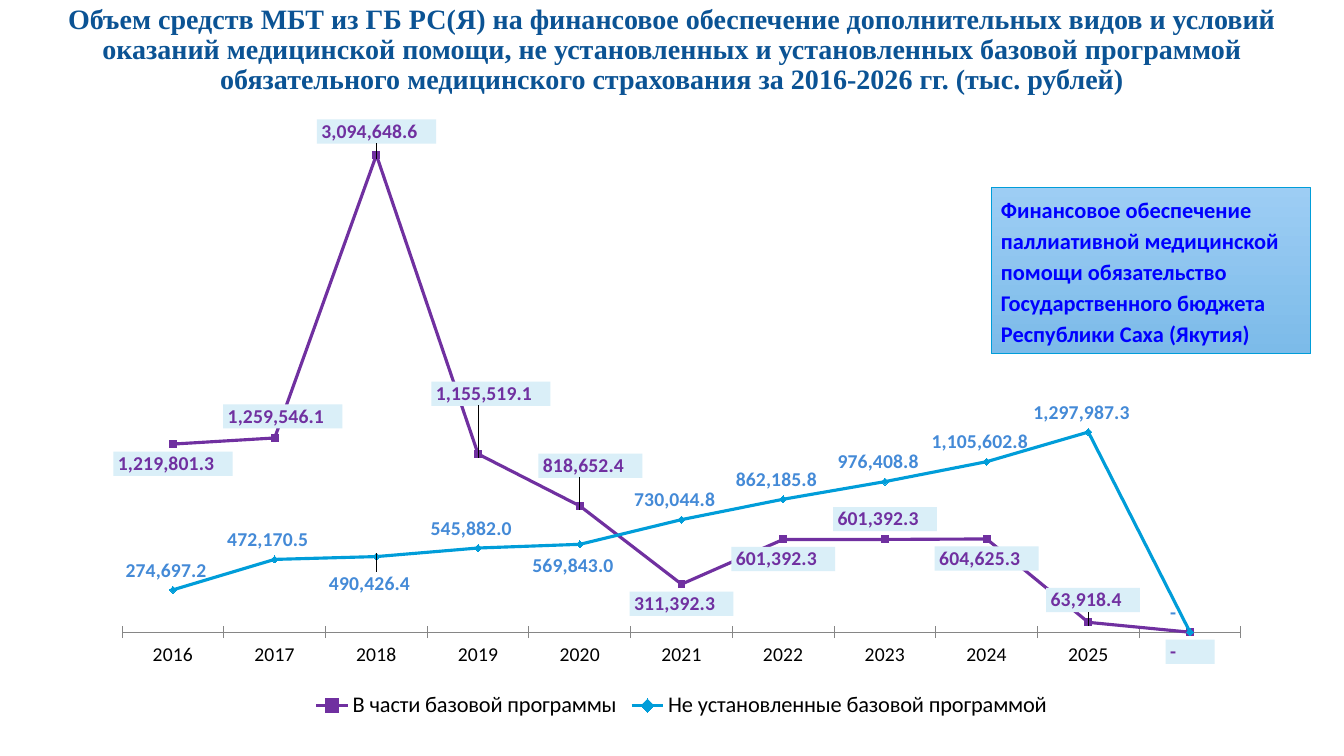
import copy

import pptx
import pptx.chart.data
import pptx.dml.color
import pptx.enum.chart
import pptx.enum.shapes
import pptx.enum.text
import pptx.oxml
import pptx.oxml.ns
import pptx.util

COLORS = {
    "title": "0B5394", "base": "7030A0", "extra": "009DD9", "extra_label": "448AD7",
    "label_fill": "DAEFF8", "axis": "868686", "text": "000000",
    "note_text": "0000FF", "note_top": "9DCDF4", "note_bottom": "7CBBE9",
}
NUMBER_FORMAT = r'_-* #,##0.0\ _₽_-;\-* #,##0.0\ _₽_-;_-* "-"??\ _₽_-;_-@_-'
YEARS = [str(year) for year in range(2016, 2027)]
below, above = pptx.enum.chart.XL_LABEL_POSITION.BELOW, pptx.enum.chart.XL_LABEL_POSITION.ABOVE
square, diamond = pptx.enum.chart.XL_MARKER_STYLE.SQUARE, pptx.enum.chart.XL_MARKER_STYLE.DIAMOND

# Label shifts are shares of the chart's width and height, keyed by point number
SERIES = [
    {"name": "В части базовой программы", "color": "base", "label_color": "base",
     "label_fill": "label_fill", "position": below, "marker": square,
     "values": [1219801.3, 1259546.1, 3094648.6, 1155519.1, 818652.4, 311392.3,
                601392.3, 601392.3, 604625.3, 63918.4, 0],
     "shifts": {1: (0.007, -0.064), 2: (0, -0.067), 3: (0.011, -0.124),
                4: (0.009, -0.093), 7: (0, -0.062), 9: (0.004, -0.065)}},
    {"name": "Не установленные базовой программой", "color": "extra",
     "label_color": "extra_label", "label_fill": None, "position": above, "marker": diamond,
     "values": [274697.2, 472170.5, 490426.4, 545882, 569843, 730044.8,
                862185.8, 976408.8, 1105602.8, 1297987.3, 0],
     "shifts": {2: (0, 0.073), 4: (0, 0.064)}},
]


def rgb(name):
    return pptx.dml.color.RGBColor.from_string(COLORS[name])


def chart_xml(body):
    """Parse chart markup whose root element has no namespace declarations yet."""
    tag, rest = body.split(">", 1)
    closed = tag.endswith("/")
    tag = tag.rstrip("/") + " " + pptx.oxml.ns.nsdecls("c", "a")
    return pptx.oxml.parse_xml(tag + ("/>" if closed else ">") + rest)


presentation = pptx.Presentation()
presentation.slide_width = pptx.util.Inches(13.33)
presentation.slide_height = pptx.util.Inches(7.5)
width, height = presentation.slide_width, presentation.slide_height
slide = presentation.slides.add_slide(presentation.slide_layouts[5])

# Title
title = slide.shapes.title
title.left, title.top, title.width, title.height = 0, 0, width, int(height * 0.165)
frame = title.text_frame
frame.text = (
    "Объем средств МБТ из ГБ РС(Я) на финансовое обеспечение дополнительных видов и условий "
    "оказаний медицинской помощи, не установленных и установленных базовой программой "
    "обязательного медицинского страхования за 2016-2026 гг. (тыс. рублей)")
frame.word_wrap = True
frame.auto_size = pptx.enum.text.MSO_AUTO_SIZE.NONE
frame.vertical_anchor = pptx.enum.text.MSO_ANCHOR.TOP
paragraph = frame.paragraphs[0]
paragraph.alignment = pptx.enum.text.PP_ALIGN.CENTER
paragraph.line_spacing = 0.9
paragraph.font.name = "Times New Roman"
paragraph.font.size = pptx.util.Pt(20)
paragraph.font.bold = True
paragraph.font.color.rgb = rgb("title")

# Chart
chart_data = pptx.chart.data.CategoryChartData(number_format=NUMBER_FORMAT)
chart_data.categories = YEARS
for item in SERIES:
    chart_data.add_series(item["name"], item["values"])
chart = slide.shapes.add_chart(
    pptx.enum.chart.XL_CHART_TYPE.LINE_MARKERS, pptx.util.Inches(0.98), pptx.util.Inches(0.79),
    pptx.util.Inches(11.56), pptx.util.Inches(6.39), chart_data).chart
chart.has_title = False
chart.font.name = "Calibri"
chart.font.size = pptx.util.Pt(18)
chart.font.color.rgb = rgb("text")
chart.has_legend = True
chart.legend.position = pptx.enum.chart.XL_LEGEND_POSITION.BOTTOM
chart.legend.include_in_layout = False
chart.legend.font.size = pptx.util.Pt(16)
chart.plots[0].vary_by_categories = False

chart.value_axis.minimum_scale = 0
chart.value_axis.maximum_scale = 3500000
chart.value_axis.has_major_gridlines = False
chart.value_axis.visible = False
chart.category_axis.major_tick_mark = pptx.enum.chart.XL_TICK_MARK.CROSS
chart.category_axis.tick_labels.font.size = pptx.util.Pt(14)
chart.category_axis.format.line.color.rgb = rgb("axis")
chart.category_axis.format.line.width = pptx.util.Pt(0.75)

plot_area = chart.plots[0]._element.getparent()
for layout in plot_area.findall(pptx.oxml.ns.qn("c:layout")):
    plot_area.remove(layout)
plot_area.insert(0, chart_xml(
    '<c:layout><c:manualLayout><c:layoutTarget val="inner"/>'
    '<c:xMode val="edge"/><c:yMode val="edge"/><c:x val="0.02"/><c:y val="0.02"/>'
    '<c:w val="0.96"/><c:h val="0.838"/></c:manualLayout></c:layout>'))

for series, item in zip(chart.plots[0].series, SERIES):
    series.smooth = False
    series.format.line.color.rgb = rgb(item["color"])
    series.format.line.width = pptx.util.Pt(2.25)
    series.marker.style = item["marker"]
    series.marker.size = 5
    series.marker.format.fill.solid()
    series.marker.format.fill.fore_color.rgb = rgb(item["color"])
    series.marker.format.line.color.rgb = rgb(item["color"])

    labels = series.data_labels
    labels.show_value = True
    labels.position = item["position"]
    labels.number_format = NUMBER_FORMAT
    labels.number_format_is_linked = False
    labels.font.size = pptx.util.Pt(14)
    labels.font.bold = True
    labels.font.color.rgb = rgb(item["label_color"])
    group = labels._element
    for leader in group.findall(pptx.oxml.ns.qn("c:showLeaderLines")):
        group.remove(leader)
    if item["label_fill"]:
        group.find(pptx.oxml.ns.qn("c:txPr")).addprevious(chart_xml(
            f'<c:spPr><a:solidFill><a:srgbClr val="{COLORS[item["label_fill"]]}"/>'
            '</a:solidFill></c:spPr>'))

    # Shifted labels keep the format of the series
    shared_format = list(group)
    for place, (point, (x, y)) in enumerate(item["shifts"].items()):
        label = chart_xml(
            f'<c:dLbl><c:idx val="{point}"/><c:layout><c:manualLayout>'
            f'<c:x val="{x}"/><c:y val="{y}"/></c:manualLayout></c:layout></c:dLbl>')
        label.extend(copy.deepcopy(shared_format))
        group.insert(place, label)

# Note
note = slide.shapes.add_shape(
    pptx.enum.shapes.MSO_SHAPE.RECTANGLE, pptx.util.Inches(9.83), pptx.util.Inches(1.86),
    pptx.util.Inches(3.17), pptx.util.Inches(1.65))
note.shadow.inherit = False
note.fill.gradient()
note.fill.gradient_angle = 270
for stop, name, position in zip(note.fill.gradient_stops, ("note_top", "note_bottom"), (0, 1)):
    stop.color.rgb = rgb(name)
    stop.position = position
note.line.color.rgb = rgb("extra")
note.line.width = pptx.util.Pt(0.5)
frame = note.text_frame
frame.text = ("Финансовое обеспечение паллиативной медицинской помощи обязательство "
              "Государственного бюджета Республики Саха (Якутия)")
frame.word_wrap = True
frame.vertical_anchor = pptx.enum.text.MSO_ANCHOR.TOP
paragraph = frame.paragraphs[0]
paragraph.alignment = pptx.enum.text.PP_ALIGN.LEFT
paragraph.line_spacing = 1.15
paragraph.space_after = pptx.util.Pt(10)
paragraph.font.name = "Calibri"
paragraph.font.size = pptx.util.Pt(16)
paragraph.font.bold = True
paragraph.font.color.rgb = rgb("note_text")

presentation.save("out.pptx")
